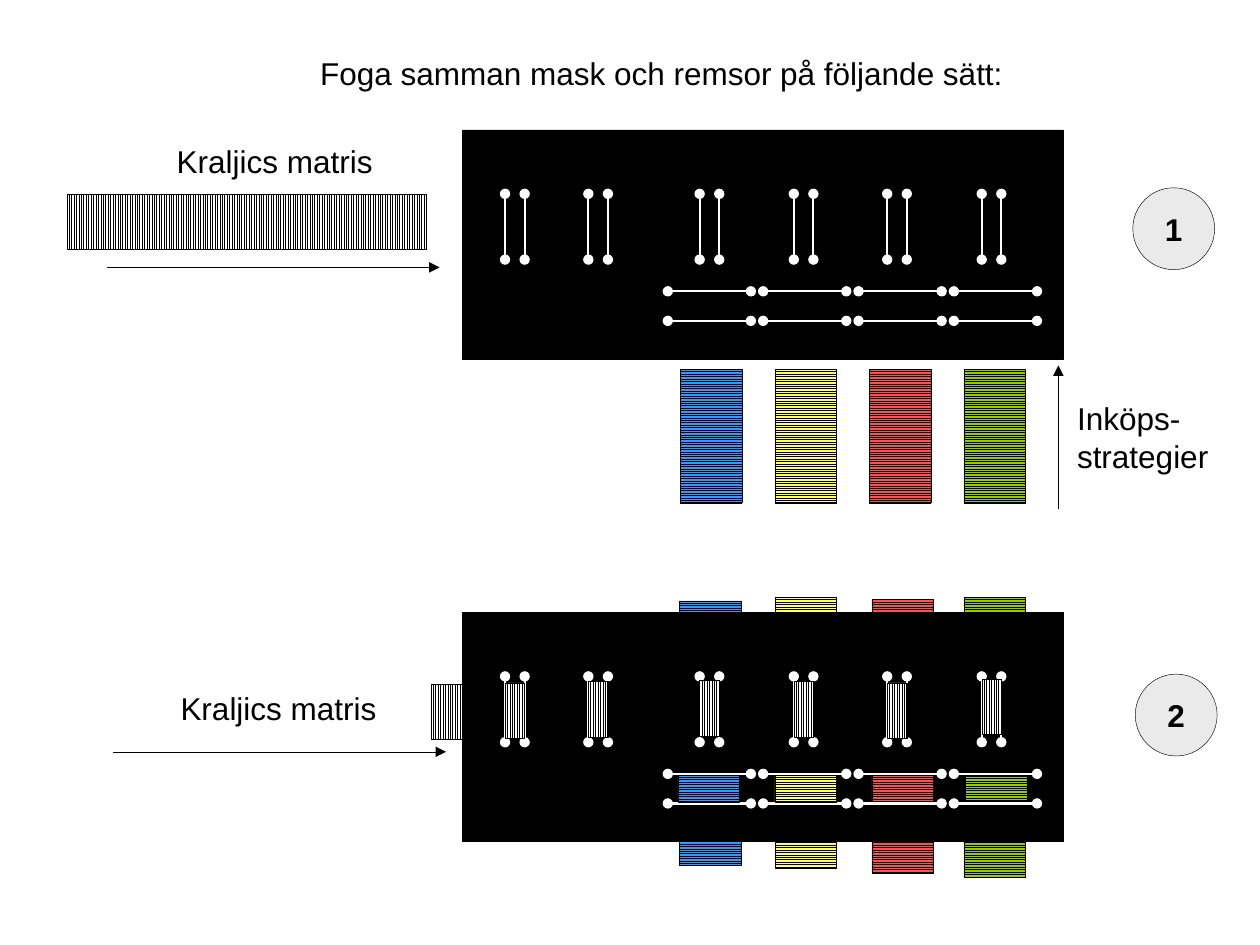
from pptx import Presentation
from pptx.dml.color import RGBColor
from pptx.enum.dml import MSO_PATTERN
from pptx.enum.shapes import MSO_CONNECTOR, MSO_SHAPE
from pptx.enum.text import MSO_ANCHOR, MSO_AUTO_SIZE, PP_ALIGN
from pptx.oxml.ns import qn
from pptx.util import Pt
from lxml import etree

RECTANGLE, OVAL = MSO_SHAPE.RECTANGLE, MSO_SHAPE.OVAL
STRAIGHT = MSO_CONNECTOR.STRAIGHT
HORIZONTAL, VERTICAL = MSO_PATTERN.LIGHT_HORIZONTAL, MSO_PATTERN.LIGHT_VERTICAL
CENTER, LEFT = PP_ALIGN.CENTER, PP_ALIGN.LEFT
MIDDLE = MSO_ANCHOR.MIDDLE
FIT_SHAPE = MSO_AUTO_SIZE.SHAPE_TO_FIT_TEXT

COLORS = {
    "black": "000000", "white": "FFFFFF", "badge": "EAEAEA",
    "blue": "3399FF", "yellow": "FFFF66", "red": "FF5050", "green": "99CC00",
}
STRATEGIES = ["blue", "yellow", "red", "green"]

MASK_LEFT, MASK_WIDTH, MASK_HEIGHT = 264.24, 343.44, 131.04
MASK_TOPS = [74.16, 349.92]
STRIP_WIDTH, STRIP_LEFT, STRIP_STEP = 35.28, 388.8, 54
MATRIX_HEIGHT = 31.68
SLIT_LEFTS = [288.6, 336.2, 399.8, 453.6, 507, 561]
SLIT_GAP = 11.2

# Left, top and height of each strategy strip threaded behind the mask
THREADED = [(388.1, 343.4, 151.2), (442.8, 341.3, 154.8),
            (498.2, 342.7, 156.2), (550.8, 341.3, 159.8)]
# Left, top and height of the part showing between the horizontal slits
STRATEGY_WINDOWS = [(387.4, 442.8, 15.8), (442.8, 442.8, 15.8),
                    (498.2, 442.8, 15.1), (551.5, 443.5, 14.4)]
MATRIX_WINDOW_TOPS = [390.2, 389.5, 388.8, 389.5, 390.2, 388.1]


def color(name):
    return RGBColor.from_string(COLORS[name])


def add_shape(slide, kind, left, top, width, height, fill, pattern=None):
    """Add an outlined shape, solid or with black lines over the fill colour."""
    shape = slide.shapes.add_shape(kind, Pt(left), Pt(top), Pt(width), Pt(height))
    shape.shadow.inherit = False
    if pattern is None:
        shape.fill.solid()
        shape.fill.fore_color.rgb = color(fill)
    else:
        shape.fill.patterned()
        shape.fill.pattern = pattern
        shape.fill.fore_color.rgb = color("black")
        shape.fill.back_color.rgb = color(fill)
    shape.line.color.rgb = color("black")
    shape.line.width = Pt(0.25)
    return shape


def add_strategy_strip(slide, name, left, top, height):
    add_shape(slide, RECTANGLE, left, top, STRIP_WIDTH, height, name, HORIZONTAL)


def add_matrix_strip(slide, left, top, width):
    add_shape(slide, RECTANGLE, left, top, width, MATRIX_HEIGHT, "white", VERTICAL)


def add_line(shapes, start, end, line_color, width, ends):
    """Draw a line; ends maps headEnd or tailEnd to its type."""
    line = shapes.add_connector(STRAIGHT, *(Pt(value) for value in start + end))
    line.line.color.rgb = color(line_color)
    line.line.width = Pt(width)
    properties = line._element.spPr
    outline = properties.find(qn("a:ln"))
    for tag, kind in ends.items():
        etree.SubElement(outline, qn(f"a:{tag}")).set("type", kind)
    etree.SubElement(properties, qn("a:effectLst"))


def add_arrow(slide, start, end):
    add_line(slide.shapes, start, end, "black", 0.25, {"tailEnd": "triangle"})


def add_slit(group, start, end):
    add_line(group.shapes, start, end, "white", 1.25,
             {"headEnd": "oval", "tailEnd": "oval"})


def add_mask(slide, top):
    add_shape(slide, RECTANGLE, MASK_LEFT, top, MASK_WIDTH, MASK_HEIGHT, "black")
    matrix_slits = slide.shapes.add_group_shape()
    for left in SLIT_LEFTS:
        for x in (left, left + SLIT_GAP):
            add_slit(matrix_slits, (x, top + 36.6), (x, top + 74.2))
    strategy_slits = slide.shapes.add_group_shape()
    for index in range(len(STRATEGIES)):
        left = 381.6 + 54.5 * index
        for y in (top + 92.3, top + 109.2):
            add_slit(strategy_slits, (left, y), (left + 47.5, y))


def write_text(frame, lines, alignment, bold=False):
    frame.word_wrap = False
    frame.text = "\n".join(lines)
    for paragraph in frame.paragraphs:
        paragraph.alignment = alignment
        paragraph.font.name = "Arial"
        paragraph.font.size = Pt(18)
        paragraph.font.bold = bold
        paragraph.font.color.rgb = color("black")


def add_label(slide, left, top, width, height, lines, alignment=CENTER):
    box = slide.shapes.add_textbox(Pt(left), Pt(top), Pt(width), Pt(height))
    write_text(box.text_frame, lines, alignment)
    box.text_frame.auto_size = FIT_SHAPE


def add_badge(slide, left, top, number):
    badge = add_shape(slide, OVAL, left, top, 46.8, 46.8, "badge")
    write_text(badge.text_frame, [number], CENTER, bold=True)
    badge.text_frame.vertical_anchor = MIDDLE


def add_step_one(slide):
    add_mask(slide, MASK_TOPS[0])
    add_matrix_strip(slide, 38.16, 110.88, 205.2)
    add_arrow(slide, (61.2, 152.8), (251.2, 152.8))
    add_label(slide, 93.6, 77.9, 126.7, 28.8, ["Kraljics matris"])
    for index, name in enumerate(STRATEGIES):
        add_strategy_strip(slide, name, STRIP_LEFT + STRIP_STEP * index, 211, 76.3)
    add_arrow(slide, (604.8, 290.9), (604.8, 208.8))
    add_label(slide, 608.4, 224.6, 89.3, 50.4, ["Inköps-", "strategier"], LEFT)
    add_badge(slide, 647.3, 107.3, "1")


def add_step_two(slide):
    for name, place in zip(STRATEGIES, THREADED):
        add_strategy_strip(slide, name, *place)
    add_matrix_strip(slide, 246.2, 391, 205.2)
    add_mask(slide, MASK_TOPS[1])
    add_label(slide, 95.8, 390.2, 126.7, 28.8, ["Kraljics matris"])
    for left, top in zip(SLIT_LEFTS, MATRIX_WINDOW_TOPS):
        add_matrix_strip(slide, left, top, SLIT_GAP)
    add_arrow(slide, (64.8, 429.6), (254.9, 429.6))
    for name, place in zip(STRATEGIES, STRATEGY_WINDOWS):
        add_strategy_strip(slide, name, *place)
    add_badge(slide, 648.7, 385.2, "2")


def main():
    presentation = Presentation()
    presentation.slide_width, presentation.slide_height = Pt(720), Pt(540)
    slide = presentation.slides.add_slide(presentation.slide_layouts[6])
    add_label(slide, 175.7, 27.6, 404.6, 28.8,
              ["Foga samman mask och remsor på följande sätt:"])
    add_step_one(slide)
    add_step_two(slide)
    presentation.save("out.pptx")


if __name__ == "__main__":
    main()
